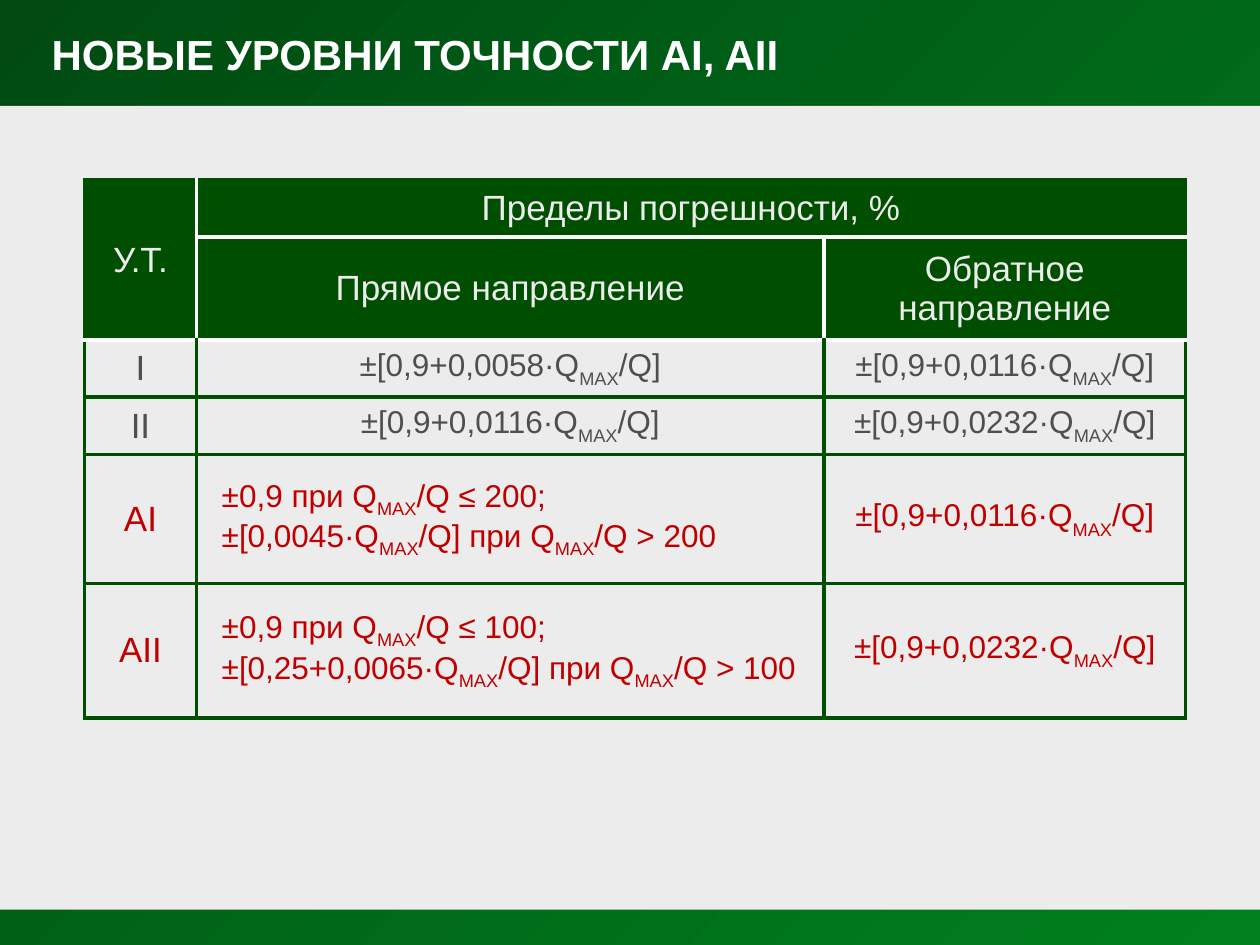
from dataclasses import dataclass
from lxml import etree
from pptx import Presentation
from pptx.dml.color import RGBColor
from pptx.enum.shapes import MSO_SHAPE
from pptx.enum.text import MSO_ANCHOR, PP_ALIGN
from pptx.oxml.ns import qn
from pptx.util import Inches, Pt

LEFT, CENTER = PP_ALIGN.LEFT, PP_ALIGN.CENTER
MIDDLE = MSO_ANCHOR.MIDDLE
RECTANGLE = MSO_SHAPE.RECTANGLE
TITLE_ONLY = 5


@dataclass(frozen=True)
class Theme:
    font: str = "Arial"
    gradient: tuple = ("004A11", "00801E")
    panel: str = "ECECEC"
    green: str = "004E00"
    white: str = "FFFFFF"
    grey: str = "4F4F4F"
    red: str = "C00000"
    title_size: int = 24
    label_size: int = 20
    formula_size: int = 18
    border: float = 2.25


THEME = Theme()

# Content: None marks a cell covered by a merged neighbour
TITLE = "НОВЫЕ УРОВНИ ТОЧНОСТИ AI, AII"
SUBSCRIPT = "MAX"
ROWS = [
    ["У.Т.", "Пределы погрешности, %", None],
    [None, "Прямое направление", "Обратное направление"],
    ["I", "±[0,9+0,0058·QMAX/Q]", "±[0,9+0,0116·QMAX/Q]"],
    ["II", "±[0,9+0,0116·QMAX/Q]", "±[0,9+0,0232·QMAX/Q]"],
    ["AI", "±0,9 при QMAX/Q ≤ 200;\n±[0,0045·QMAX/Q] при QMAX/Q > 200",
     "±[0,9+0,0116·QMAX/Q]"],
    ["AII", "±0,9 при QMAX/Q ≤ 100;\n±[0,25+0,0065·QMAX/Q] при QMAX/Q > 100",
     "±[0,9+0,0232·QMAX/Q]"],
]
MERGES = [((0, 0), (1, 0)), ((0, 1), (0, 2))]
HEADER_ROWS = 2
NEW_LEVELS = ("AI", "AII")

# Layout in inches
SLIDE_W, SLIDE_H = 10, 7.5
PANEL_TOP, PANEL_H = 0.84, 6.38
TITLE_BOX = (0.31, 0.13, 7.77, 0.64)
TABLE_LEFT, TABLE_TOP = 0.67, 1.43
COLUMN_WIDTHS = (0.89, 4.98, 2.87)
ROW_HEIGHTS = (0.45, 0.82, 0.45, 0.46, 1.02, 1.07)


def rgb(value):
    return RGBColor.from_string(value)


def style_font(font, size, color, bold=False):
    font.name, font.size, font.bold = THEME.font, Pt(size), bold
    font.color.rgb = rgb(color)


def write_line(paragraph, line, align, size, color):
    """Write one line, lowering every subscript."""
    paragraph.alignment = align
    if align == LEFT:
        paragraph._p.get_or_add_pPr().set("indent", str(Inches(0.1)))
    style_font(paragraph.font, size, color)
    for i, part in enumerate(line.split(SUBSCRIPT)):
        if i:
            lowered = paragraph.add_run()
            lowered.text = SUBSCRIPT
            drop = "-25000" if align == LEFT else "-30000"
            lowered._r.get_or_add_rPr().set("baseline", drop)
        if part:
            paragraph.add_run().text = part


def draw_borders(cell, row, col):
    """White lines inside and below the header, green elsewhere."""
    header = row < HEADER_ROWS
    last_col = col + cell.span_width - 1
    white_edges = {
        "L": header and col > 0,
        "R": header and last_col < len(COLUMN_WIDTHS) - 1,
        "T": 0 < row <= HEADER_ROWS,
        "B": header,
    }
    properties = cell._tc.get_or_add_tcPr()
    for side, is_white in white_edges.items():
        line = etree.SubElement(properties, qn(f"a:ln{side}"), w=str(Pt(THEME.border)))
        fill = etree.SubElement(line, qn("a:solidFill"))
        etree.SubElement(fill, qn("a:srgbClr"),
                         val=THEME.white if is_white else THEME.green)


def fill_cell(cell, row, col, text):
    draw_borders(cell, row, col)
    header = row < HEADER_ROWS
    if header:
        cell.fill.solid()
        cell.fill.fore_color.rgb = rgb(THEME.green)
    else:
        cell.fill.background()
    if text is None:
        return
    cell.vertical_anchor = MIDDLE
    color = (THEME.panel if header
             else THEME.red if ROWS[row][0] in NEW_LEVELS else THEME.grey)
    size = THEME.label_size if header or col == 0 else THEME.formula_size
    lines = text.split("\n")
    align = LEFT if len(lines) > 1 else CENTER
    frame = cell.text_frame
    for i, line in enumerate(lines):
        paragraph = frame.add_paragraph() if i else frame.paragraphs[0]
        write_line(paragraph, line, align, size, color)


def main():
    prs = Presentation()
    prs.slide_width, prs.slide_height = Inches(SLIDE_W), Inches(SLIDE_H)
    slide = prs.slides.add_slide(prs.slide_layouts[TITLE_ONLY])

    # Gradient background, dark at the top left
    background = slide.background.fill
    background.gradient()
    background.gradient_angle = 315
    for stop, color, position in zip(background.gradient_stops, THEME.gradient, (0, 1)):
        stop.color.rgb = rgb(color)
        stop.position = position

    # Light panel
    panel = slide.shapes.add_shape(RECTANGLE, 0, Inches(PANEL_TOP),
                                   Inches(SLIDE_W), Inches(PANEL_H))
    panel.shadow.inherit = False
    panel.fill.solid()
    panel.fill.fore_color.rgb = rgb(THEME.panel)
    panel.line.fill.background()

    # Title
    title = slide.shapes.title
    title.left, title.top, title.width, title.height = map(Inches, TITLE_BOX)
    title.text_frame.text = TITLE
    title.text_frame.vertical_anchor = MIDDLE
    heading = title.text_frame.paragraphs[0]
    heading.alignment = LEFT
    heading.line_spacing = 0.9
    style_font(heading.font, THEME.title_size, THEME.white, bold=True)

    # Table of error limits
    limits = slide.shapes.add_table(
        len(ROWS), len(COLUMN_WIDTHS), Inches(TABLE_LEFT), Inches(TABLE_TOP),
        Inches(sum(COLUMN_WIDTHS)), Inches(sum(ROW_HEIGHTS))).table
    limits.first_row = limits.horz_banding = False
    for column, width in zip(limits.columns, COLUMN_WIDTHS):
        column.width = Inches(width)
    for table_row, height in zip(limits.rows, ROW_HEIGHTS):
        table_row.height = Inches(height)
    for first, last in MERGES:
        limits.cell(*first).merge(limits.cell(*last))
    for row, texts in enumerate(ROWS):
        for col, text in enumerate(texts):
            fill_cell(limits.cell(row, col), row, col, text)

    prs.save("out.pptx")


if __name__ == "__main__":
    main()
